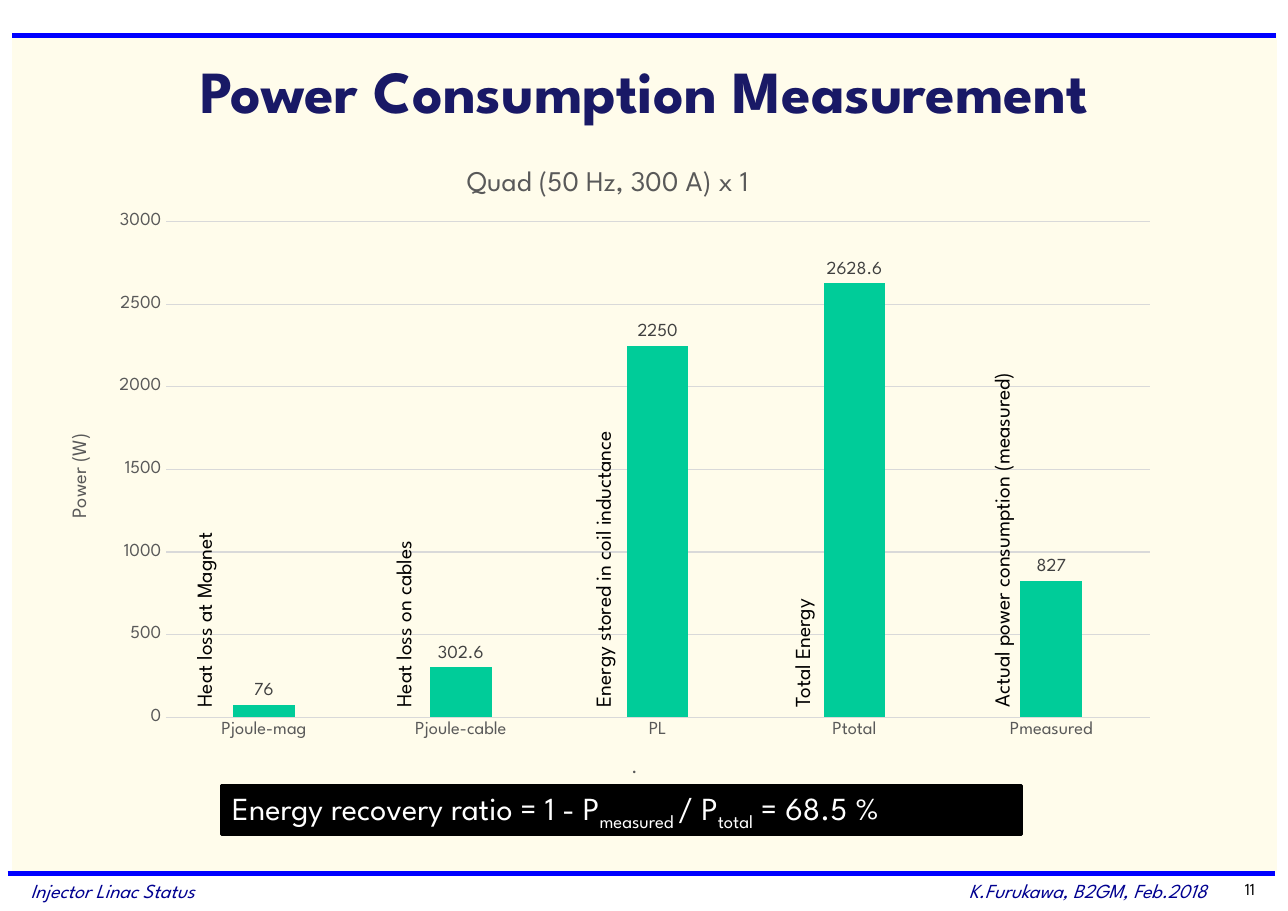
"""Build the power consumption measurement slide with its column chart."""
from lxml import etree
from pptx import Presentation
from pptx.chart.data import CategoryChartData
from pptx.dml.color import RGBColor
from pptx.enum.chart import XL_CHART_TYPE, XL_LABEL_POSITION, XL_TICK_MARK
from pptx.enum.shapes import MSO_CONNECTOR, MSO_SHAPE
from pptx.enum.text import MSO_ANCHOR, PP_ALIGN
from pptx.oxml.ns import qn
from pptx.util import Inches, Pt

FONT = "League Spartan"
COLORS = {
    "cream": "FFFCEB", "rule": "0000FF", "footer": "000090", "title": "191966",
    "black": "000000", "white": "FFFFFF", "bar": "00CC99",
    "axis": "595959", "grid": "D9D9D9", "label": "404040",
}
POWERS = {"Pjoule-mag": 76, "Pjoule-cable": 302.6, "PL": 2250,
          "Ptotal": 2628.6, "Pmeasured": 827}
BAR_NOTES = [
    ("Heat loss at Magnet", 2.07),
    ("Heat loss on cables", 2.05),
    ("Energy stored in coil inductance", 3.29),
    ("Total Energy", 1.41),
    ("Actual power consumption (measured)", 3.89),
]
RATIO_PARTS = [("Energy recovery ratio = 1 - P", False), ("measured ", True),
               ("/ P", False), ("total", True), (" = 68.5 %", False)]
PLOT_LAYOUT = {"x": 0.107, "y": 0.119, "w": 0.874, "h": 0.751}


def color(name):
    return RGBColor.from_string(COLORS[name])


def style_font(font, size, color_name, bold=False, italic=False):
    font.name = FONT
    font.size = Pt(size)
    font.bold = bold
    font.italic = italic
    font.color.rgb = color(color_name)


def add_box(slide, left, top, width, height, fill):
    box = slide.shapes.add_shape(MSO_SHAPE.RECTANGLE, Inches(left), Inches(top),
                                 Inches(width), Inches(height))
    box.shadow.inherit = False
    box.fill.solid()
    box.fill.fore_color.rgb = color(fill)
    box.line.fill.background()
    return box


def add_rule(slide, left, right, top):
    rule = slide.shapes.add_connector(MSO_CONNECTOR.STRAIGHT, Inches(left), Inches(top),
                                      Inches(right), Inches(top))
    rule.line.color.rgb = color("rule")
    rule.line.width = Pt(3)
    etree.SubElement(rule.element.spPr, qn("a:effectLst"))


def add_text(slide, text, left, top, width, height, size, color_name,
             align=PP_ALIGN.LEFT, italic=False, wrap=True):
    box = slide.shapes.add_textbox(Inches(left), Inches(top), Inches(width), Inches(height))
    box.text_frame.word_wrap = wrap
    paragraph = box.text_frame.paragraphs[0]
    paragraph.text = text
    paragraph.alignment = align
    style_font(paragraph.font, size, color_name, italic=italic)
    return box


def set_title(slide, text):
    title = slide.shapes.title
    title.left, title.top = Inches(0.18), Inches(0.42)
    title.width, title.height = Inches(11.33), Inches(0.78)
    title.text_frame.vertical_anchor = MSO_ANCHOR.MIDDLE
    paragraph = title.text_frame.paragraphs[0]
    paragraph.text = text
    paragraph.alignment = PP_ALIGN.CENTER
    style_font(paragraph.font, 39, "title", bold=True)
    title.element.getparent().append(title.element)


def set_chart_title(owner, text, size):
    paragraph = owner.text_frame.paragraphs[0]
    paragraph.text = text
    style_font(paragraph.font, size, "axis")


def style_axis(axis, text):
    set_chart_title(axis.axis_title, text, 13.3)
    axis.major_tick_mark = axis.minor_tick_mark = XL_TICK_MARK.NONE
    style_font(axis.tick_labels.font, 12, "axis")


def place_plot(chart):
    plot_area = chart.element.find(".//" + qn("c:plotArea"))
    for layout in plot_area.findall(qn("c:layout")):
        plot_area.remove(layout)
    layout = etree.Element(qn("c:layout"))
    manual = etree.SubElement(layout, qn("c:manualLayout"))
    settings = {"layoutTarget": "inner", "xMode": "edge", "yMode": "edge", **PLOT_LAYOUT}
    for tag, value in settings.items():
        etree.SubElement(manual, qn("c:" + tag)).set("val", str(value))
    plot_area.insert(0, layout)


def add_power_chart(slide):
    data = CategoryChartData()
    data.categories = list(POWERS)
    data.add_series("Series 1", list(POWERS.values()))
    chart = slide.shapes.add_chart(XL_CHART_TYPE.COLUMN_CLUSTERED, Inches(0.41), Inches(1.3),
                                   Inches(10.22), Inches(5.99), data).chart
    style_font(chart.font, 10, "black")
    chart.has_legend = False
    chart.has_title = True
    set_chart_title(chart.chart_title, "Quad (50 Hz, 300 A) x 1", 18.6)
    place_plot(chart)

    style_axis(chart.category_axis, ".")
    chart.category_axis.format.line.color.rgb = color("grid")
    chart.category_axis.format.line.width = Pt(0.75)
    values = chart.value_axis
    style_axis(values, "Power (W)")
    values.minimum_scale, values.maximum_scale, values.major_unit = 0, 3000, 500
    values.format.line.fill.background()
    values.major_gridlines.format.line.color.rgb = color("grid")
    values.major_gridlines.format.line.width = Pt(0.75)

    plot = chart.plots[0]
    plot.gap_width, plot.overlap = 219, -27
    plot.vary_by_categories = False
    series = plot.series[0]
    series.format.fill.solid()
    series.format.fill.fore_color.rgb = color("bar")
    labels = series.data_labels
    labels.show_value = True
    labels.position = XL_LABEL_POSITION.OUTSIDE_END
    style_font(labels.font, 12, "label")


def add_bar_notes(slide):
    first_center, pitch, bottom, height = 1.85, 1.81, 6.52, 0.34
    for index, (text, length) in enumerate(BAR_NOTES):
        center = first_center + index * pitch
        note = add_text(slide, text, center - length / 2, bottom - (length + height) / 2,
                        length, height, 14, "black", wrap=False)
        note.rotation = 270


def add_recovery_ratio(slide):
    box = add_box(slide, 2.01, 7.13, 7.26, 0.45, "black")
    box.line.color.rgb = color("black")
    box.line.width = Pt(2)
    paragraph = box.text_frame.paragraphs[0]
    paragraph.alignment = PP_ALIGN.LEFT
    style_font(paragraph.font, 21, "white")
    for text, is_subscript in RATIO_PARTS:
        run = paragraph.add_run()
        run.text = text
        if is_subscript:
            run.font._element.set("baseline", "-25000")


def main():
    presentation = Presentation()
    presentation.slide_width, presentation.slide_height = Inches(11.69), Inches(8.27)
    slide = presentation.slides.add_slide(presentation.slide_layouts[5])
    add_box(slide, 0.11, 0.31, 11.48, 7.62, "cream")
    add_rule(slide, 0.11, 11.58, 0.32)
    add_rule(slide, 0.07, 11.57, 7.93)
    add_text(slide, "Injector Linac Status", 0.18, 7.93, 7, 0.33, 13, "footer", italic=True)
    add_text(slide, "K.Furukawa, B2GM, Feb.2018", 4.05, 7.93, 7, 0.33, 13, "footer",
             align=PP_ALIGN.RIGHT, italic=True)
    set_title(slide, "Power Consumption Measurement")
    add_power_chart(slide)
    add_text(slide, "11", 10.81, 7.93, 0.68, 0.28, 11, "black", align=PP_ALIGN.RIGHT)
    add_bar_notes(slide)
    add_recovery_ratio(slide)
    presentation.save("out.pptx")


if __name__ == "__main__":
    main()
